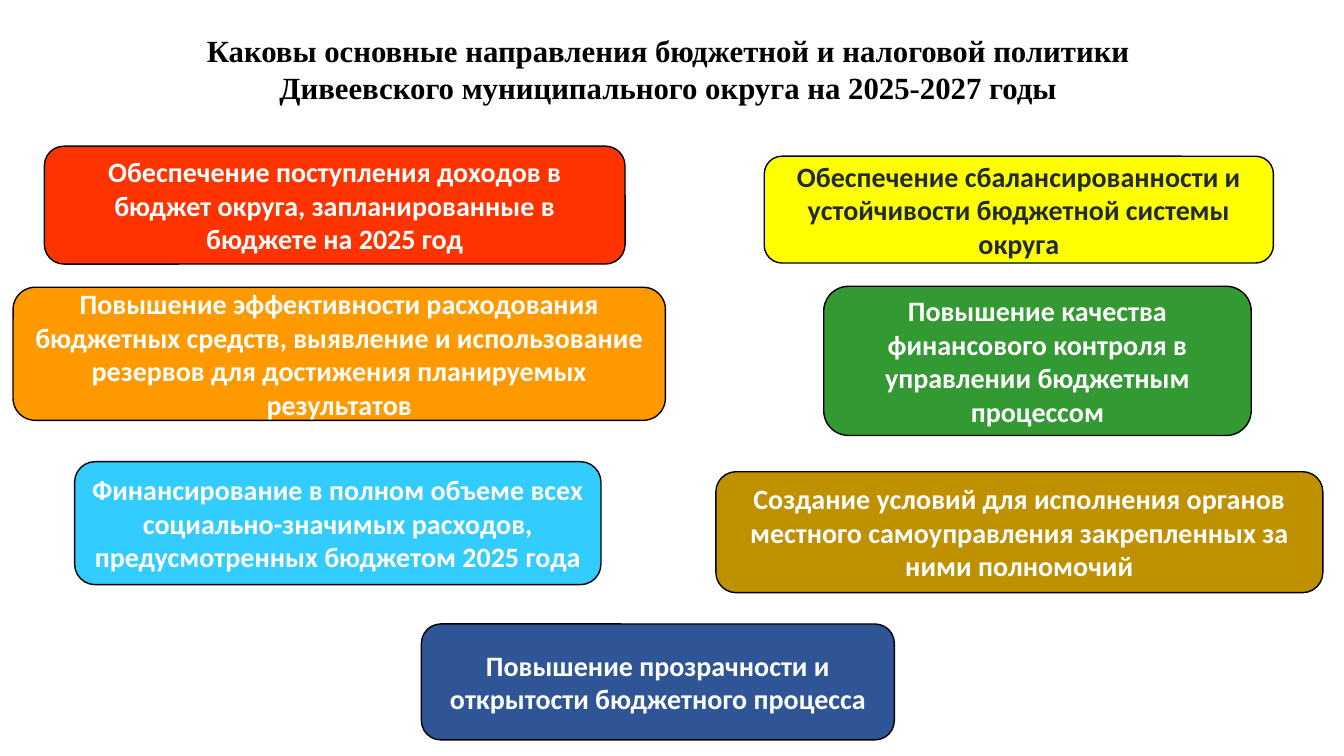
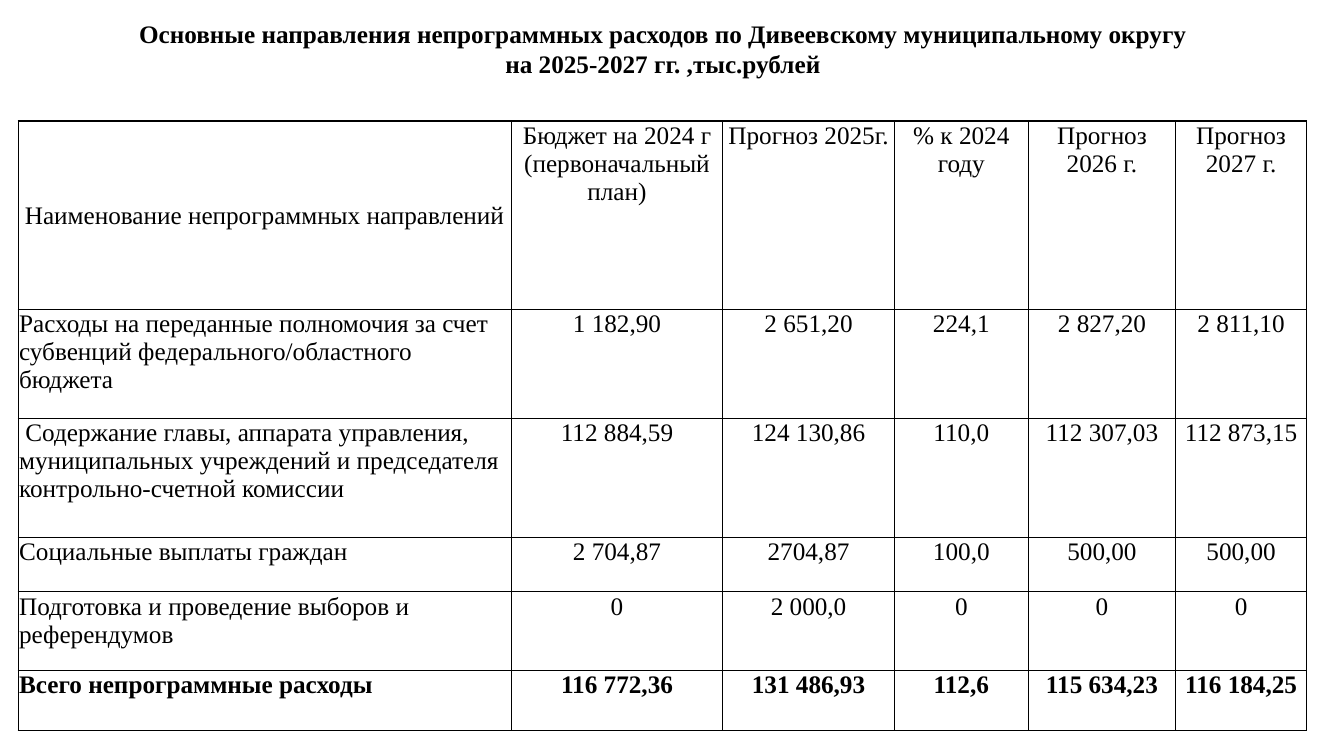
from pptx import Presentation
from pptx.dml.color import RGBColor
from pptx.enum import shapes, text
from pptx.oxml import parse_xml
from pptx.oxml.ns import nsdecls
from pptx.util import Inches, Pt

BLACK, WHITE, DARK = "000000", "FFFFFF", "222A35"
SERIF, SANS = "Times New Roman", "Calibri"
CENTER, LEFT = text.PP_ALIGN.CENTER, text.PP_ALIGN.LEFT
MIDDLE, TOP = text.MSO_ANCHOR.MIDDLE, text.MSO_ANCHOR.TOP

# Slide 1: text, fill, text colour, (left, top, width, height)
POLICY_TITLE = ("Каковы основные направления бюджетной и налоговой политики "
                "Дивеевского муниципального округа на 2025-2027 годы")
DIRECTIONS = [
    ("Обеспечение поступления доходов в бюджет округа, запланированные в бюджете на 2025 год",
     "FF3300", WHITE, (0.44, 1.45, 5.76, 1.17)),
    ("Обеспечение сбалансированности и устойчивости бюджетной системы округа",
     "FFFF00", DARK, (7.58, 1.55, 5.05, 1.06)),
    ("Повышение эффективности расходования бюджетных средств, выявление и использование "
     "резервов для достижения планируемых результатов",
     "FF9900", WHITE, (0.13, 2.85, 6.47, 1.32)),
    ("Повышение качества финансового контроля в управлении бюджетным процессом",
     "339933", WHITE, (8.17, 2.84, 4.24, 1.48)),
    ("Финансирование в полном объеме всех социально-значимых расходов, "
     "предусмотренных бюджетом 2025 года",
     "33CCFF", WHITE, (0.74, 4.58, 5.22, 1.22)),
    ("Создание условий для исполнения органов местного самоуправления "
     "закрепленных за ними полномочий",
     "BF9000", WHITE, (7.1, 4.68, 6.02, 1.2)),
    ("Повышение прозрачности и открытости бюджетного процесса",
     "2F5597", WHITE, (4.18, 6.19, 4.69, 1.15)),
]

# Slide 2: header, spending lines, total
SPENDING_TITLE = ("Основные направления непрограммных расходов по Дивеевскому "
                  "муниципальному округу на 2025-2027 гг. ,тыс.рублей")
SPENDING = [
    ("Наименование непрограммных направлений", "Бюджет на 2024 г (первоначальный план)",
     "Прогноз 2025г.", "% к 2024 году", "Прогноз 2026 г.", "Прогноз 2027 г."),
    ("Расходы на переданные полномочия за счет субвенций федерального/областного бюджета",
     "1 182,90", "2 651,20", "224,1", "2 827,20", "2 811,10"),
    (" Содержание главы, аппарата управления, муниципальных учреждений и председателя "
     "контрольно-счетной комиссии",
     "112 884,59", "124 130,86", "110,0", "112 307,03", "112 873,15"),
    ("Социальные выплаты граждан", "2 704,87", "2704,87", "100,0", "500,00", "500,00"),
    ("Подготовка и проведение выборов и референдумов", "0", "2 000,0", "0", "0", "0"),
    ("Всего непрограммные расходы",
     "116 772,36", "131 486,93", "112,6", "115 634,23", "116 184,25"),
]
COL_WIDTHS = [4.89, 2.1, 1.7, 1.33, 1.46, 1.3]
ROW_HEIGHTS = [1.87, 1.08, 1.18, 0.54, 0.78, 0.6]


def rgb(color):
    return RGBColor.from_string(color)


def write(tf, content, size, font=SERIF, color=BLACK, bold=True, align=CENTER):
    tf.word_wrap = True
    p = tf.paragraphs[0]
    p.text, p.alignment = content, align
    f = p.font
    f.name, f.size, f.bold, f.color.rgb = font, Pt(size), bold, rgb(color)


def add_title(s, content, size, box, anchor):
    tf = s.shapes.add_textbox(*map(Inches, box)).text_frame
    tf.vertical_anchor = anchor
    write(tf, content, size)


def add_direction(s, content, fill, color, box):
    sp = s.shapes.add_shape(shapes.MSO_SHAPE.FLOWCHART_ALTERNATE_PROCESS, *map(Inches, box))
    sp.shadow.inherit = False
    sp.fill.solid()
    sp.fill.fore_color.rgb = rgb(fill)
    sp.line.color.rgb, sp.line.width = rgb(BLACK), Pt(1)
    sp.text_frame.vertical_anchor = MIDDLE
    write(sp.text_frame, content, 20, SANS, color)


def add_borders(cell):
    tc_pr = cell._tc.get_or_add_tcPr()
    for i, side in enumerate("LRTB"):
        tc_pr.insert(i, parse_xml(
            f'<a:ln{side} {nsdecls("a")} w="{Pt(1)}"><a:solidFill>'
            f'<a:srgbClr val="{BLACK}"/></a:solidFill></a:ln{side}>'))


def add_spending_table(s, left, top):
    frame = s.shapes.add_table(len(SPENDING), len(COL_WIDTHS), Inches(left), Inches(top),
                               Inches(sum(COL_WIDTHS)), Inches(sum(ROW_HEIGHTS)))
    table = frame.table
    table.first_row = table.horz_banding = False
    for col, width in zip(table.columns, COL_WIDTHS):
        col.width = Inches(width)
    for r, (row, height) in enumerate(zip(SPENDING, ROW_HEIGHTS)):
        table.rows[r].height = Inches(height)
        for c, content in enumerate(row):
            cell = table.cell(r, c)
            cell.margin_left = cell.margin_right = cell.margin_top = Inches(0.01)
            cell.margin_bottom = 0
            cell.vertical_anchor = MIDDLE if r == c == 0 else TOP
            cell.fill.background()
            add_borders(cell)
            write(cell.text_frame, content, 18, bold=r == len(SPENDING) - 1,
                  align=LEFT if r and c == 0 else CENTER)


def main():
    prs = Presentation()
    prs.slide_width, prs.slide_height = Inches(13.33), Inches(7.5)
    blank = prs.slide_layouts[6]

    # Policy directions
    s = prs.slides.add_slide(blank)
    for direction in DIRECTIONS:
        add_direction(s, *direction)
    add_title(s, POLICY_TITLE, 22, (1.78, 0.14, 9.69, 1.09), MIDDLE)

    # Spending outside programmes
    s = prs.slides.add_slide(blank)
    add_title(s, SPENDING_TITLE, 18, (1.19, 0.13, 10.77, 0.71), TOP)
    add_spending_table(s, 0.18, 1.2)

    prs.save("out.pptx")


if __name__ == "__main__":
    main()
